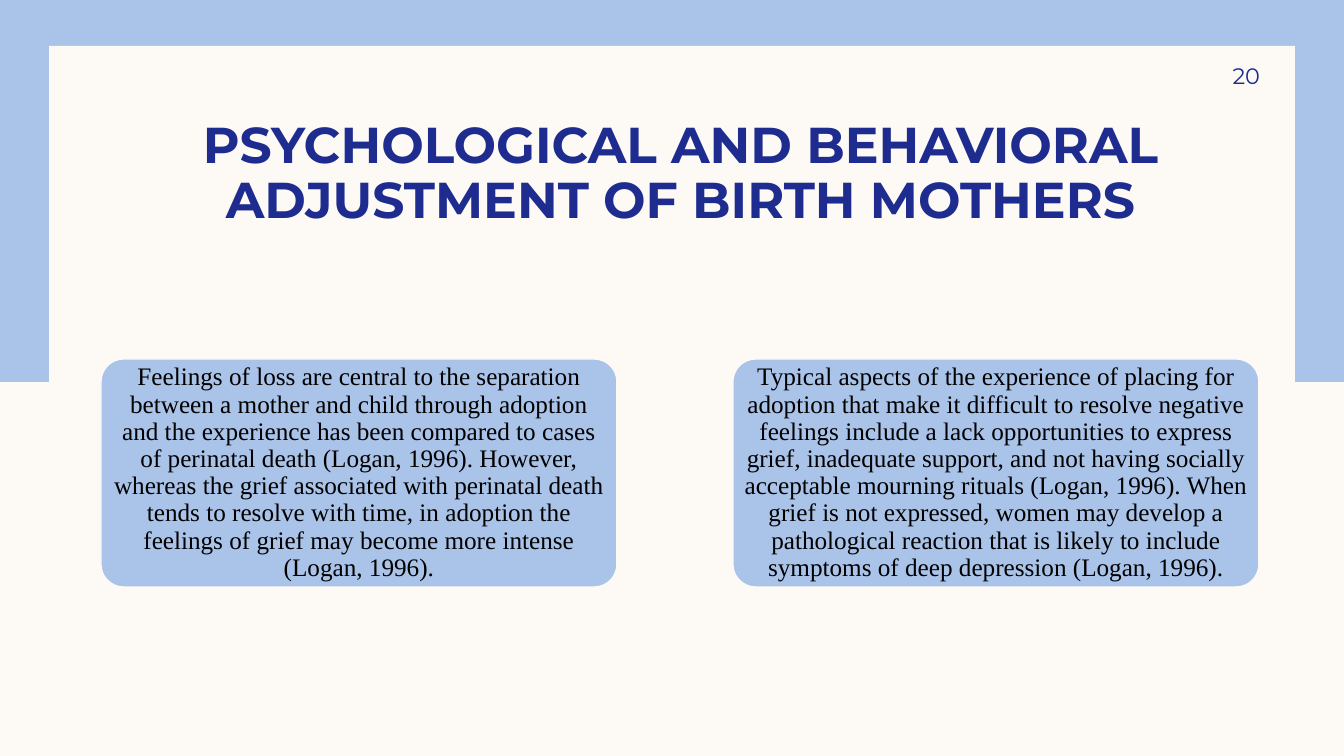
from pptx import Presentation
from pptx import util as u
from pptx.dml.color import RGBColor
from pptx.enum import shapes, text

CREAM = RGBColor(0xFD, 0xFA, 0xF6)
SKY = RGBColor(0xAA, 0xC3, 0xE8)
NAVY = RGBColor(0x1F, 0x2C, 0x8F)
BLACK = RGBColor(0, 0, 0)

HEADING = "PSYCHOLOGICAL AND BEHAVIORAL ADJUSTMENT OF BIRTH MOTHERS"
PAGE_NUMBER = "20"
FINDINGS = [
    (101, 516, "Feelings of loss are central to the separation between a mother and child "
     "through adoption and the experience has been compared to cases of perinatal death "
     "(Logan, 1996). However, whereas the grief associated with perinatal death tends to "
     "resolve with time, in adoption the feelings of grief may become more intense "
     "(Logan, 1996)."),
    (733, 526, "Typical aspects of the experience of placing for adoption that make it "
     "difficult to resolve negative feelings include a lack opportunities to express "
     "grief, inadequate support, and not having socially acceptable mourning rituals "
     "(Logan, 1996). When grief is not expressed, women may develop a pathological "
     "reaction that is likely to include symptoms of deep depression (Logan, 1996)."),
]
FINDING_TOP, FINDING_HEIGHT = 359, 228
BACKDROP = [((0, 0, 1344, 382), SKY), ((49, 46, 1246, 664), CREAM)]


def px(length):
    return round(length * 914400 / 100.8)


def add_panel(slide, kind, box, fill):
    panel = slide.shapes.add_shape(kind, *map(px, box))
    panel.shadow.inherit = False
    panel.fill.solid()
    panel.fill.fore_color.rgb = fill
    panel.line.fill.background()
    return panel


def write(holder, wording, font, size, color, align, anchor, insets, spacing=1.0, bold=False):
    frame = holder.text_frame
    frame.word_wrap = True
    frame.vertical_anchor = anchor
    frame.margin_left, frame.margin_top, frame.margin_right, frame.margin_bottom = map(px, insets)
    frame.text = wording
    paragraph = frame.paragraphs[0]
    paragraph.alignment = align
    paragraph.line_spacing = spacing
    for run in paragraph.runs:
        run.font.name = font
        run.font.size = u.Pt(size)
        run.font.bold = bold
        run.font.color.rgb = color


def main():
    deck = Presentation()
    deck.slide_width, deck.slide_height = px(1344), px(756)
    slide = deck.slides.add_slide(deck.slide_layouts[6])
    slide.background.fill.solid()
    slide.background.fill.fore_color.rgb = CREAM

    for box, fill in BACKDROP:
        add_panel(slide, shapes.MSO_SHAPE.RECTANGLE, box, fill)

    heading = slide.shapes.add_textbox(*map(px, (101, 117, 1159, 112)))
    write(heading, HEADING, "Montserrat", 36, NAVY, text.PP_ALIGN.CENTER,
          text.MSO_ANCHOR.BOTTOM, (10, 0, 10, 0), 0.9, True)

    page_number = slide.shapes.add_textbox(*map(px, (1142, 50, 118, 52)))
    write(page_number, PAGE_NUMBER, "Montserrat", 16, NAVY, text.PP_ALIGN.RIGHT,
          text.MSO_ANCHOR.MIDDLE, (10, 5, 0, 5))

    for left, width, wording in FINDINGS:
        finding = add_panel(slide, shapes.MSO_SHAPE.ROUNDED_RECTANGLE,
                            (left, FINDING_TOP, width, FINDING_HEIGHT), SKY)
        finding.adjustments[0] = 0.1
        finding.line.color.rgb = CREAM
        finding.line.width = u.Pt(1)
        write(finding, wording, "Times New Roman", 18, BLACK, text.PP_ALIGN.CENTER,
              text.MSO_ANCHOR.MIDDLE, (4, 3, 4, 3), 0.9)

    deck.save("out.pptx")


if __name__ == "__main__":
    main()
